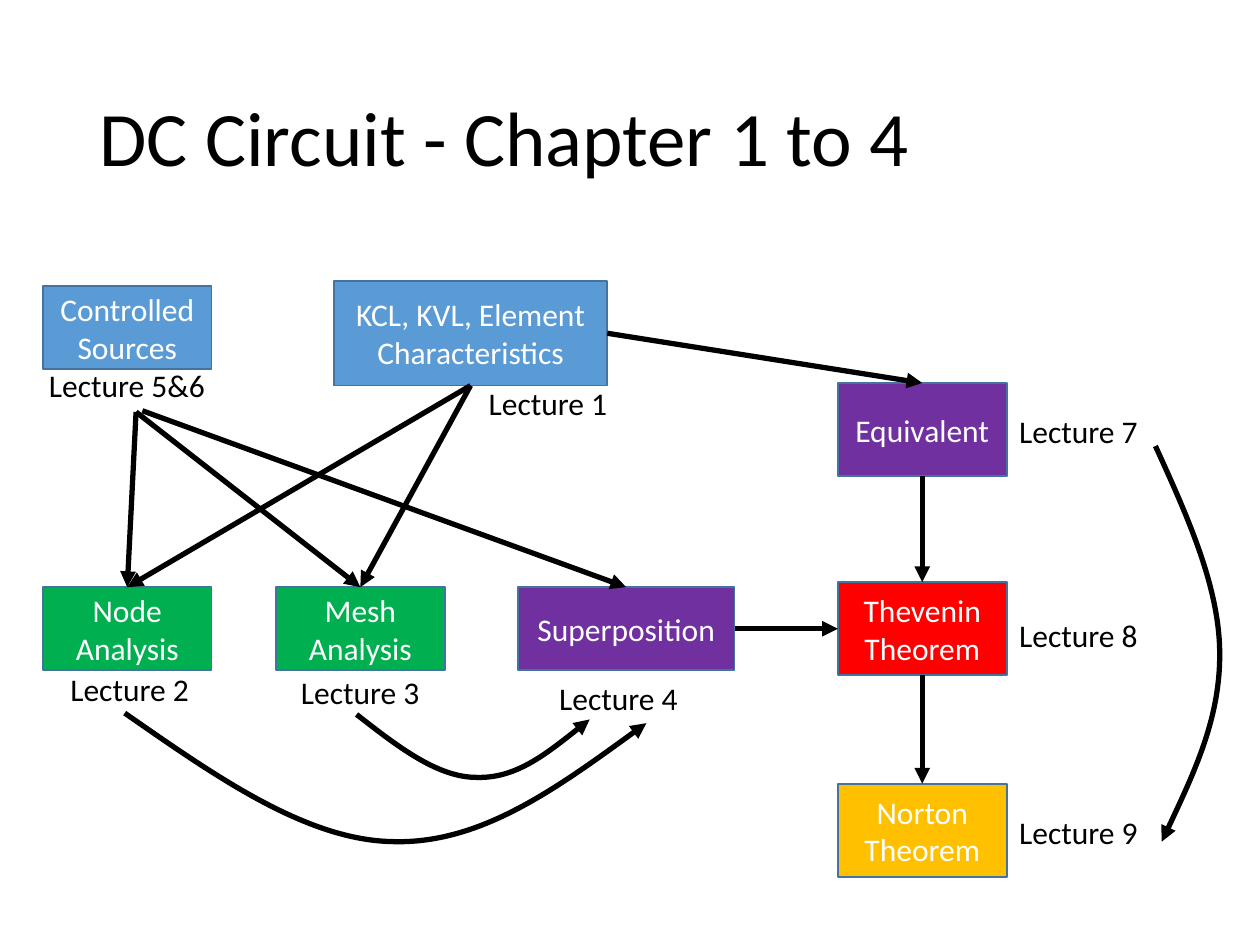
from pptx import Presentation
from pptx.dml.color import RGBColor
from pptx.enum.shapes import MSO_CONNECTOR, MSO_SHAPE
from pptx.enum.text import MSO_ANCHOR, PP_ALIGN
from pptx.oxml.ns import qn
from pptx.oxml.xmlchemy import OxmlElement
from pptx.util import Inches, Pt

BLUE, GREEN, PURPLE, RED, GOLD = "5B9BD5", "00B050", "7030A0", "FF0000", "FFC000"
BLACK, WHITE, BORDER = "000000", "FFFFFF", "43739E"
TOP, LEFT, BOTTOM, RIGHT = range(4)  # connection sites of a rectangle


def rgb(value):
    return RGBColor.from_string(value)


def inches(values):
    return [Inches(v) for v in values]


class Diagram:
    font = {"name": "Calibri", "size": Pt(18)}
    frame = {"word_wrap": True, "vertical_anchor": MSO_ANCHOR.TOP}

    def __init__(self, slide):
        self.s = slide

    def set_text(self, sp, text, color, align=PP_ALIGN.LEFT, size=18, **frame):
        tf = sp.text_frame
        for name, value in {**self.frame, **frame}.items():
            setattr(tf, name, value)
        p = tf.paragraphs[0]
        p.alignment = align
        r = p.add_run()
        r.text = text
        for name, value in {**self.font, "size": Pt(size)}.items():
            setattr(r.font, name, value)
        r.font.color.rgb = rgb(color)
        return p

    def title(self, text, *box):
        sp = self.s.shapes.add_textbox(*inches(box))
        p = self.set_text(sp, text, BLACK, size=44, vertical_anchor=MSO_ANCHOR.MIDDLE)
        p.line_spacing = 0.9

    def label(self, text, left, top, width):
        sp = self.s.shapes.add_textbox(*inches((left, top, width, 0.4)))
        self.set_text(sp, text, BLACK)

    def box(self, text, fill, *box):
        sp = self.s.shapes.add_shape(MSO_SHAPE.RECTANGLE, *inches(box))
        sp.shadow.inherit = False
        sp.fill.solid()
        sp.fill.fore_color.rgb = rgb(fill)
        sp.line.color.rgb = rgb(BORDER)
        sp.line.width = Pt(1)
        self.set_text(sp, text, WHITE, PP_ALIGN.CENTER, vertical_anchor=MSO_ANCHOR.MIDDLE)
        return sp

    def arrow_line(self, sp):
        """Give a connector or curve the thick black stroke with an arrowhead."""
        sp.line.color.rgb = rgb(BLACK)
        sp.line.width = Pt(3)
        tail = OxmlElement("a:tailEnd")
        tail.set("type", "triangle")
        sp._element.spPr.find(qn("a:ln")).append(tail)

    def arrow(self, start, end):
        """Join two ends; the start is a (box, site) pair or an (x, y) point."""
        sp = self.s.shapes.add_connector(MSO_CONNECTOR.STRAIGHT, 0, 0, 0, 0)
        if isinstance(start[0], float):
            sp.begin_x, sp.begin_y = inches(start)
        else:
            sp.begin_connect(*start)
        sp.end_connect(*end)
        self.arrow_line(sp)
        sp._element.spPr.append(OxmlElement("a:effectLst"))

    def curve(self, start, *points):
        """Draw cubic Bezier segments, three points for each segment."""
        builder = self.s.shapes.build_freeform(*inches(start))
        builder.add_line_segments([inches(pt) for pt in points], close=False)
        sp = builder.convert_to_shape()
        sp.shadow.inherit = False
        sp.fill.background()
        steps = list(sp._element.iter(qn("a:lnTo")))
        for i in range(0, len(steps), 3):
            bezier = OxmlElement("a:cubicBezTo")
            steps[i].addprevious(bezier)
            for step in steps[i:i + 3]:
                bezier.append(step[0])
                step.getparent().remove(step)
        self.arrow_line(sp)


def main():
    prs = Presentation()
    prs.slide_width, prs.slide_height = Inches(10), Inches(7.5)
    d = Diagram(prs.slides.add_slide(prs.slide_layouts[6]))

    d.title("DC Circuit - Chapter 1 to 4", 0.69, 0.4, 8.62, 1.45)

    laws = d.box("KCL, KVL, Element Characteristics", BLUE, 2.65, 2.23, 2.17, 0.83)
    d.box("Controlled Sources", BLUE, 0.34, 2.27, 1.34, 0.66)
    node, mesh, superposition = [
        d.box(text, fill, left, 4.66, width, 0.66)
        for text, fill, left, width in (
            ("Node Analysis", GREEN, 0.34, 1.34),
            ("Mesh Analysis", GREEN, 2.19, 1.34),
            ("Superposition", PURPLE, 4.11, 1.72),
        )
    ]
    equivalent, thevenin, norton = [
        d.box(text, fill, 6.65, top, 1.34, 0.74)
        for text, fill, top in (
            ("Equivalent", PURPLE, 3.04),
            ("Thevenin Theorem", RED, 4.62),
            ("Norton Theorem", GOLD, 6.22),
        )
    ]

    for number, left, top, width in (
        ("1", 3.78, 3, 1.29),
        ("2", 0.46, 5.27, 1.29),
        ("3", 2.29, 5.29, 1.29),
        ("4", 4.34, 5.34, 1.34),
        ("5&6", 0.29, 2.86, 1.59),
        ("7", 7.99, 3.22, 1.59),
        ("8", 7.99, 4.84, 1.59),
        ("9", 7.99, 6.4, 1.59),
    ):
        d.label(f"Lecture {number}", left, top, width)

    for target in (node, mesh):
        d.arrow((laws, BOTTOM), (target, TOP))
        d.arrow((1.08, 3.27), (target, TOP))
    d.arrow((1.13, 3.26), (superposition, TOP))
    d.arrow((laws, RIGHT), (equivalent, TOP))
    d.arrow((equivalent, BOTTOM), (thevenin, TOP))
    d.arrow((superposition, RIGHT), (thevenin, LEFT))
    d.arrow((thevenin, BOTTOM), (norton, TOP))

    d.curve((9.17, 3.54), (9.42, 4.09), (9.67, 4.64), (9.68, 5.16),
            (9.69, 5.69), (9.45, 6.19), (9.22, 6.68))
    d.curve((2.83, 5.67), (3.15, 5.92), (3.47, 6.17), (3.78, 6.17),
            (4.09, 6.18), (4.38, 5.95), (4.68, 5.71))
    d.curve((0.99, 5.66), (1.71, 6.16), (2.43, 6.67), (3.12, 6.68),
            (3.81, 6.7), (4.47, 6.22), (5.13, 5.74))

    prs.save("out.pptx")


if __name__ == "__main__":
    main()
